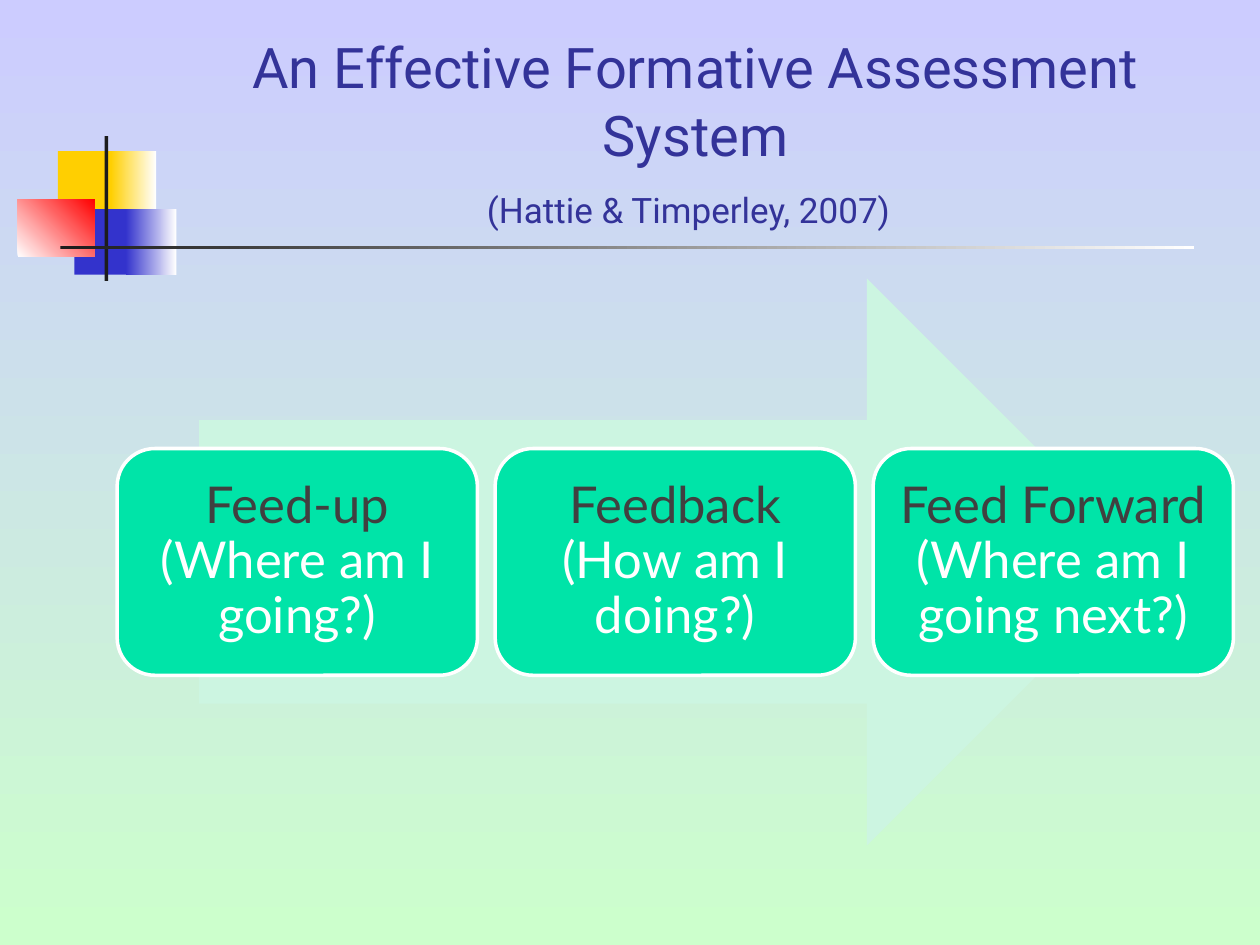
"""Build a slide on the three steps of an effective formative assessment system."""
import pptx
import pptx.util
from pptx.dml.color import RGBColor
from pptx.enum.shapes import MSO_SHAPE
from pptx.enum.text import MSO_ANCHOR, PP_ALIGN
from pptx.util import Inches

LAVENDER = RGBColor(0xCC, 0xCC, 0xFF)
PALE_GREEN = RGBColor(0xCC, 0xFF, 0xCC)
YELLOW = RGBColor(0xFF, 0xCF, 0x01)
BLUE = RGBColor(0x33, 0x33, 0xCC)
RED = RGBColor(0xFF, 0x00, 0x00)
WHITE = RGBColor(0xFF, 0xFF, 0xFF)
BLACK = RGBColor(0x1C, 0x1C, 0x1C)
NAVY = RGBColor(0x33, 0x33, 0x99)
MINT = RGBColor(0xCC, 0xF5, 0xE1)
GREEN = RGBColor(0x00, 0xE4, 0xA8)
GREY = RGBColor(0x40, 0x40, 0x40)

TITLE = "An Effective Formative Assessment System"
CITATION = "(Hattie & Timperley, 2007)"
STEPS = [
    ("Feed-up", " (Where am I going?)"),
    ("Feedback", " (How am I doing?)"),
    ("Feed Forward ", "(Where am I going next?)"),
]
ORNAMENT = [
    ((0.46, 1.2, 0.48, 0.52), (YELLOW,), 0),
    ((0.88, 1.2, 0.36, 0.52), (YELLOW, WHITE), 0),
    ((0.59, 1.66, 0.46, 0.52), (BLUE,), 0),
    ((1, 1.66, 0.4, 0.52), (BLUE, WHITE), 0),
    ((0.14, 1.58, 0.61, 0.46), (WHITE, RED), 45),
    ((0.83, 1.08, 0.03, 1.15), (BLACK,), 0),
    ((0.48, 1.95, 9, 0.03), (BLACK, WHITE), 0),
]
CARD_LEFT, CARD_TOP, CARD_WIDTH, CARD_HEIGHT = 0.93, 3.56, 2.86, 1.8
CARD_PITCH = 3
CARD_INSET = 0.11


def paint(fill, colors, angle=0):
    if len(colors) == 1:
        fill.solid()
        fill.fore_color.rgb = colors[0]
        return
    fill.gradient()
    fill.gradient_angle = angle
    for stop, color, position in zip(fill.gradient_stops, colors, (0, 1)):
        stop.color.rgb = color
        stop.position = position


def add_block(slide, kind, box, colors, angle=0):
    block = slide.shapes.add_shape(kind, *map(Inches, box))
    block.shadow.inherit = False
    block.line.fill.background()
    paint(block.fill, colors, angle)
    return block


def set_inset(frame, inset):
    frame.margin_left = frame.margin_right = Inches(inset)
    frame.margin_top = frame.margin_bottom = Inches(inset)


def add_styled_run(paragraph, text, size, face, color):
    run = paragraph.add_run()
    run.text = text
    run.font.size = pptx.util.Pt(size)
    run.font.name = face
    run.font.color.rgb = color


def add_title(slide):
    heading = slide.shapes.add_textbox(*map(Inches, (1.26, 0.23, 8.52, 1.68)))
    frame = heading.text_frame
    frame.word_wrap = True
    frame.vertical_anchor = MSO_ANCHOR.BOTTOM
    paragraph = frame.paragraphs[0]
    paragraph.alignment = PP_ALIGN.CENTER
    add_styled_run(paragraph, TITLE, 32, "Roboto", NAVY)
    paragraph.add_line_break()
    add_styled_run(paragraph, CITATION, 20, "Roboto", NAVY)
    add_styled_run(paragraph, " ", 32, "Roboto", NAVY)


def add_step(slide, index, name, question):
    box = (CARD_LEFT + index * CARD_PITCH, CARD_TOP, CARD_WIDTH, CARD_HEIGHT)
    card = add_block(slide, MSO_SHAPE.ROUNDED_RECTANGLE, box, (GREEN,))
    card.line.color.rgb = WHITE
    card.line.width = pptx.util.Pt(2)
    frame = card.text_frame
    frame.word_wrap = True
    frame.vertical_anchor = MSO_ANCHOR.MIDDLE
    set_inset(frame, CARD_INSET)
    paragraph = frame.paragraphs[0]
    paragraph.alignment = PP_ALIGN.CENTER
    paragraph.line_spacing = 0.9
    add_styled_run(paragraph, name, 29, "Lato", GREY)
    add_styled_run(paragraph, question, 29, "Lato", WHITE)


def main():
    deck = pptx.Presentation()
    deck.slide_width, deck.slide_height = Inches(10), Inches(7.5)
    slide = deck.slides.add_slide(deck.slide_layouts[6])
    paint(slide.background.fill, (LAVENDER, PALE_GREEN), 270)
    for box, colors, angle in ORNAMENT:
        add_block(slide, MSO_SHAPE.RECTANGLE, box, colors, angle)
    add_title(slide)
    add_block(slide, MSO_SHAPE.RIGHT_ARROW, (1.58, 2.21, 7.55, 4.5), (MINT,))
    for index, (name, question) in enumerate(STEPS):
        add_step(slide, index, name, question)
    deck.save("out.pptx")


if __name__ == "__main__":
    main()
